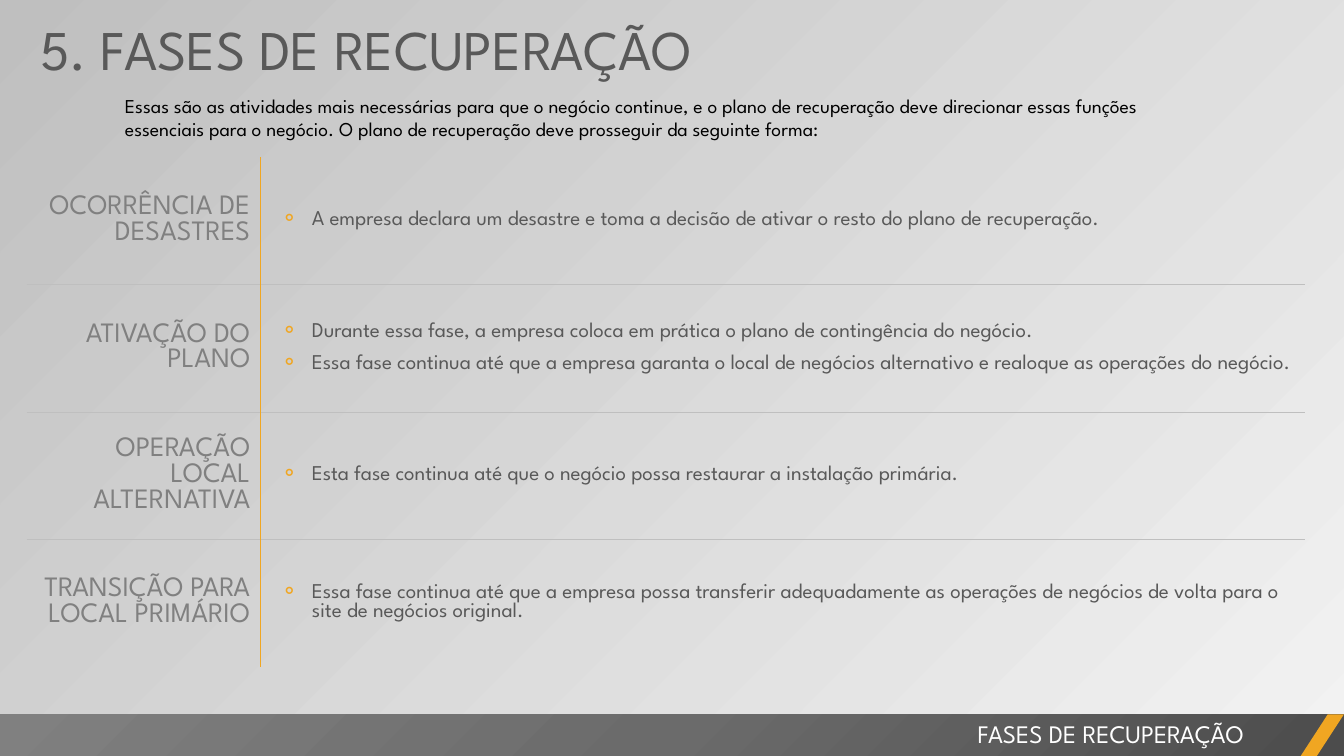
"""Build the slide on the phases of recovery."""
from dataclasses import dataclass

from lxml.etree import SubElement
from pptx import Presentation
from pptx.dml.color import RGBColor
from pptx.enum.shapes import MSO_CONNECTOR, MSO_SHAPE
from pptx.enum.text import MSO_ANCHOR, MSO_AUTO_SIZE, PP_ALIGN
from pptx.oxml import parse_xml
from pptx.oxml.ns import nsdecls, qn
from pptx.util import Cm, Pt

FONT = "League Spartan"
AMBER = RGBColor(0xF0, 0xA6, 0x22)
DARK = RGBColor(0x59, 0x59, 0x59)
GRAY = RGBColor(0x80, 0x80, 0x80)
RULE = RGBColor(0xBF, 0xBF, 0xBF)
PALE = RGBColor(0xF2, 0xF2, 0xF2)
WHITE = RGBColor(0xFF, 0xFF, 0xFF)
BLACK = RGBColor(0, 0, 0)
WIDE, HIGH = 33.87, 19.05
BAR = 18.0
TIP = 1.09
LEFT, TOP, STEP = 0.68, 3.96, 3.21
COLS = (5.88, 26.32)


@dataclass
class Phase:
    """A table row: a phase and its points."""
    name: str
    points: list[str]


@dataclass
class Label:
    """A block of text, with its box in centimetres."""
    text: str
    box: tuple[float, float, float, float]
    size: int
    color: RGBColor
    align: PP_ALIGN = PP_ALIGN.LEFT


TITLE = Label("5. FASES DE RECUPERAÇÃO", (0.76, 0.25, 31.62, 1.96), 40, DARK)
LABELS = [
    Label("FASES DE RECUPERAÇÃO", (13.34, 17.98, 18.26, 1.02), 18, WHITE, PP_ALIGN.RIGHT),
    Label("Essas são as atividades mais necessárias para que o negócio continue, "
          "e o plano de recuperação deve direcionar essas funções essenciais para "
          "o negócio. O plano de recuperação deve prosseguir da seguinte forma:",
          (2.9, 2.24, 27.36, 1.45), 14, BLACK),
]
PHASES = [
    Phase("OCORRÊNCIA DE DESASTRES", [
        "A empresa declara um desastre e toma a decisão de ativar o resto do plano de recuperação."]),
    Phase("ATIVAÇÃO DO PLANO", [
        "Durante essa fase, a empresa coloca em prática o plano de contingência do negócio.",
        "Essa fase continua até que a empresa garanta o local de negócios alternativo "
        "e realoque as operações do negócio."]),
    Phase("OPERAÇÃO LOCAL ALTERNATIVA", [
        "Esta fase continua até que o negócio possa restaurar a instalação primária."]),
    Phase("TRANSIÇÃO PARA LOCAL PRIMÁRIO", [
        "Essa fase continua até que a empresa possa transferir adequadamente as "
        "operações de negócios de volta para o site de negócios original."]),
]


def write(para, text: str, size: int, color: RGBColor) -> None:
    """Add one styled run to a paragraph."""
    run = para.add_run()
    run.text = text
    run.font.name = FONT
    run.font.size = Pt(size)
    run.font.color.rgb = color


def place(shape, label: Label) -> None:
    """Set a text shape's box and fill in its text."""
    shape.left, shape.top, shape.width, shape.height = map(Cm, label.box)
    frame = shape.text_frame
    frame.word_wrap = True
    frame.auto_size = MSO_AUTO_SIZE.NONE
    frame.vertical_anchor = MSO_ANCHOR.TOP
    para = frame.paragraphs[0]
    para.alignment = label.align
    para.line_spacing = 1.0
    write(para, label.text, label.size, label.color)


def paint(slide) -> None:
    """Fill the background with a diagonal gradient."""
    fill = slide.background.fill
    fill.gradient()
    fill.gradient_angle = 135
    for stop, color in zip(fill.gradient_stops, (PALE, RULE)):
        stop.color.rgb = color


def block(slide, kind: MSO_SHAPE, left: float, width: float):
    """Add a plain shape along the foot of the slide."""
    shape = slide.shapes.add_shape(kind, Cm(left), Cm(BAR), Cm(width), Cm(HIGH - BAR))
    shape.shadow.inherit = False
    shape.line.fill.background()
    return shape


def shade(shape) -> None:
    """Give a shape a radial gradient from its lower right corner."""
    stops = "".join(
        f'<a:gs pos="{pos}"><a:srgbClr val="{tone}"/></a:gs>'
        for pos, tone in ((0, "4C4C4C"), (50000, "6B6B6B"), (100000, "808080")))
    grad = parse_xml(
        f'<a:gradFill {nsdecls("a")} rotWithShape="1"><a:gsLst>{stops}</a:gsLst>'
        '<a:path path="circle"><a:fillToRect l="100000" t="100000"/></a:path></a:gradFill>')
    shape.fill.background()
    props = shape.element.spPr
    props.replace(props.find(qn("a:noFill")), grad)


def edge(cell, side: str, shown: bool) -> None:
    """Draw one border of a cell, or clear it."""
    line = SubElement(cell._tc.get_or_add_tcPr(), qn(f"a:ln{side}"), w=str(Pt(0.5)))
    if shown:
        SubElement(SubElement(line, qn("a:solidFill")), qn("a:srgbClr"), val=str(RULE))
    else:
        SubElement(line, qn("a:noFill"))


def frame(cell, row: int) -> None:
    """Set a cell's borders, anchor and empty fill."""
    edge(cell, "L", False)
    edge(cell, "R", False)
    edge(cell, "T", row > 0)
    edge(cell, "B", row < len(PHASES) - 1)
    cell.fill.background()
    cell.vertical_anchor = MSO_ANCHOR.MIDDLE


def mark(para) -> None:
    """Give a paragraph an amber ring bullet."""
    props = para._p.get_or_add_pPr()
    props.set("marL", str(Cm(0.79)))
    props.set("indent", str(Cm(-0.79)))
    SubElement(SubElement(props, qn("a:buClr")), qn("a:srgbClr"), val=str(AMBER))
    SubElement(props, qn("a:buChar"), char="⚬")


def table(slide) -> None:
    """Add the table of phases."""
    grid = slide.shapes.add_table(
        len(PHASES), 2, Cm(LEFT), Cm(TOP), Cm(sum(COLS)), Cm(STEP * len(PHASES))).table
    grid.first_row = grid.horz_banding = False
    for col, width in zip(grid.columns, COLS):
        col.width = Cm(width)
    for row, phase in enumerate(PHASES):
        grid.rows[row].height = Cm(STEP)
        name, body = grid.cell(row, 0), grid.cell(row, 1)
        frame(name, row)
        frame(body, row)
        body.margin_left = Cm(0.51)
        para = name.text_frame.paragraphs[0]
        para.alignment = PP_ALIGN.RIGHT
        write(para, phase.name, 20, GRAY)
        for index, point in enumerate(phase.points):
            text = body.text_frame
            para = text.add_paragraph() if index else text.paragraphs[0]
            para.space_before = Pt(9 if index else 0)
            mark(para)
            write(para, point, 15, DARK)


def divide(slide) -> None:
    """Draw the amber line between the columns."""
    left, end = Cm(LEFT + COLS[0]), Cm(TOP + STEP * len(PHASES))
    line = slide.shapes.add_connector(MSO_CONNECTOR.STRAIGHT, left, Cm(TOP), left, end)
    line.line.color.rgb = AMBER
    line.line.width = Pt(1)
    SubElement(line.element.spPr, qn("a:effectLst"))


def main() -> None:
    """Build and save the slide."""
    deck = Presentation()
    deck.slide_width, deck.slide_height = Cm(WIDE), Cm(HIGH)
    slide = deck.slides.add_slide(deck.slide_layouts[5])
    paint(slide)
    shade(block(slide, MSO_SHAPE.RECTANGLE, 0, WIDE))
    tip = block(slide, MSO_SHAPE.PARALLELOGRAM, WIDE - TIP, TIP)
    tip.adjustments[0] = 0.65
    tip.fill.solid()
    tip.fill.fore_color.rgb = AMBER
    place(slide.shapes.title, TITLE)
    table(slide)
    divide(slide)
    for label in LABELS:
        place(slide.shapes.add_textbox(0, 0, 0, 0), label)
    deck.save("out.pptx")


if __name__ == "__main__":
    main()
